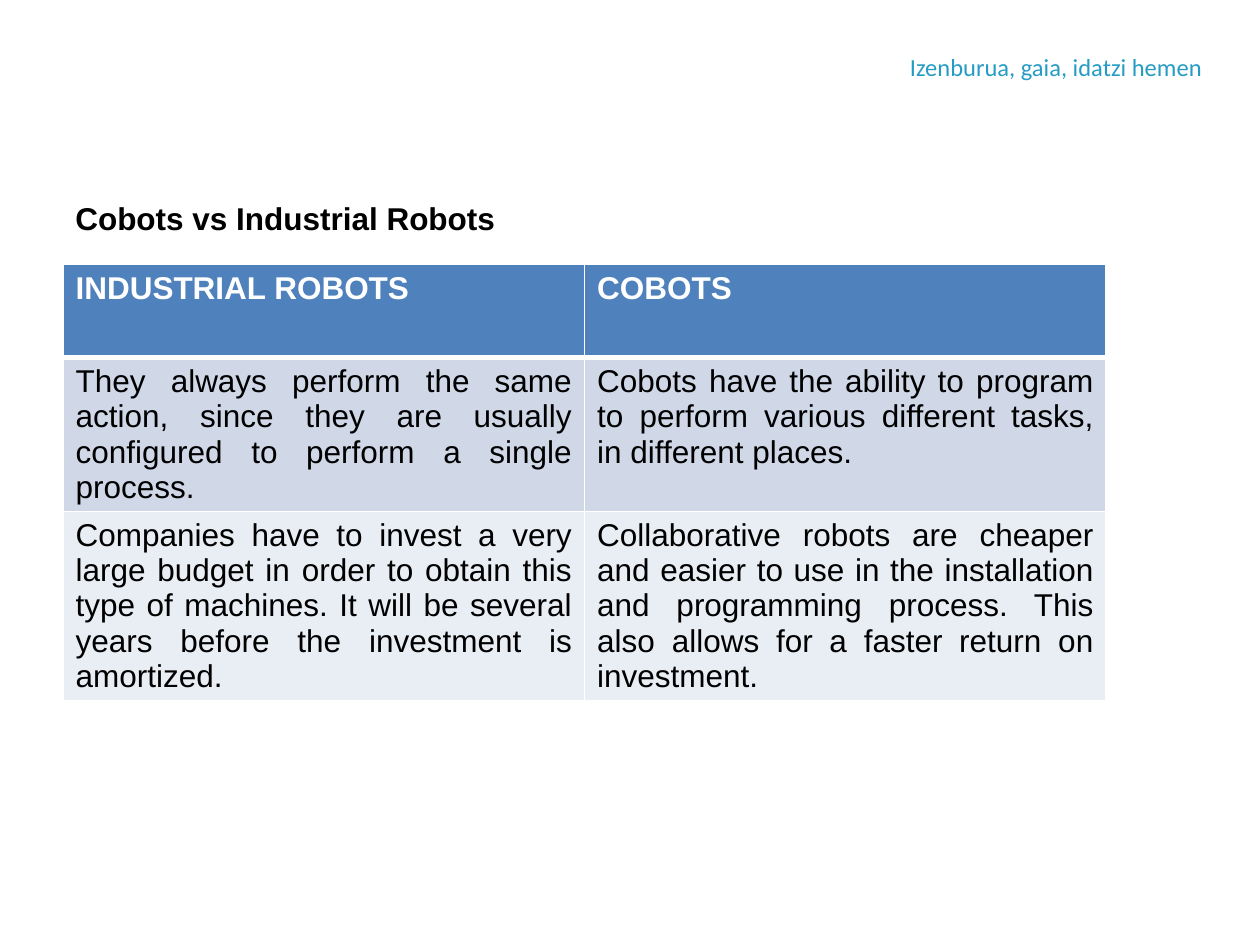
from lxml import etree
from pptx import Presentation
from pptx.dml.color import RGBColor
from pptx.enum.text import MSO_ANCHOR, PP_ALIGN
from pptx.oxml.ns import qn
from pptx.util import Inches, Pt

ROWS = [
    ("INDUSTRIAL ROBOTS", "COBOTS"),
    ("They always perform the same action, since they are usually configured "
     "to perform a single process.",
     "Cobots have the ability to program to perform various different tasks, "
     "in different places."),
    ("Companies have to invest a very large budget in order to obtain this type "
     "of machines. It will be several years before the investment is amortized.",
     "Collaborative robots are cheaper and easier to use in the installation and "
     "programming process. This also allows for a faster return on investment."),
]
# Minimum heights: the rows grow to fit their text
ROW_HEIGHTS = [0.74, 1.02, 0.43]
ROW_FILLS = ["4F81BD", "D0D8E8", "E9EDF4"]


def color(value):
    return RGBColor.from_string(value)


def style(para, size, name, value, bold=False, align=PP_ALIGN.LEFT):
    para.alignment = align
    font = para.font
    font.size, font.name, font.bold = Pt(size), name, bold
    font.color.rgb = color(value)


def add_text(page, left, top, width, height, text, **look):
    right, bottom = left + width, top + height
    builder = page.shapes.build_freeform(Inches(left), Inches(top))
    builder.add_line_segments(
        [(Inches(x), Inches(y))
         for x, y in [(right, top), (right, bottom), (left, bottom)]])
    box = builder.convert_to_shape()
    box.shadow.inherit = False
    box.fill.background()
    box.line.fill.background()
    box.text_frame.word_wrap = True
    box.text_frame.vertical_anchor = MSO_ANCHOR.TOP
    para = box.text_frame.paragraphs[0]
    para.text = text
    style(para, **look)


def add_border(cell, side, points):
    # Border lines must come before the fill in the cell properties
    properties = cell._tc.get_or_add_tcPr()
    line = etree.Element(qn(f"a:ln{side}"), w=str(Pt(points)))
    fill = etree.SubElement(line, qn("a:solidFill"))
    etree.SubElement(fill, qn("a:srgbClr"), val="FFFFFF")
    properties.insert("LRTB".index(side), line)


def add_comparison(page, left, top, width, height):
    frame = page.shapes.add_table(
        len(ROWS), 2, Inches(left), Inches(top), Inches(width), Inches(height))
    table = frame.table
    for column in table.columns:
        column.width = Inches(width / 2)
    for row, texts in enumerate(ROWS):
        table.rows[row].height = Inches(ROW_HEIGHTS[row])
        header = row == 0
        for column, text in enumerate(texts):
            cell = table.cell(row, column)
            cell.fill.solid()
            cell.fill.fore_color.rgb = color(ROW_FILLS[row])
            # The rule below the header is heavier than the others
            for side in "LRTB":
                add_border(cell, side, 3 if header and side == "B" else 1)
            para = cell.text_frame.paragraphs[0]
            para.text = text
            style(para, 18, "Arial", "FFFFFF" if header else "000000",
                  bold=header, align=PP_ALIGN.JUSTIFY)
    frame.height = Inches(height)


def main():
    deck = Presentation()
    deck.slide_width, deck.slide_height = Inches(10), Inches(7.5)
    page = deck.slides.add_slide(deck.slide_layouts[6])
    # Running header
    add_text(page, 5.94, 0.36, 3.7, 0.29, "Izenburua, gaia, idatzi hemen",
             size=14, name="Calibri", value="269CC4", align=PP_ALIGN.RIGHT)
    # Heading
    add_text(page, 0.5, 1.53, 9, 4.99, "Cobots vs Industrial Robots",
             size=18, name="Arial", value="000000", bold=True)
    # Comparison table
    add_comparison(page, 0.5, 2.1, 8.28, 3.64)
    deck.save("out.pptx")


if __name__ == "__main__":
    main()
